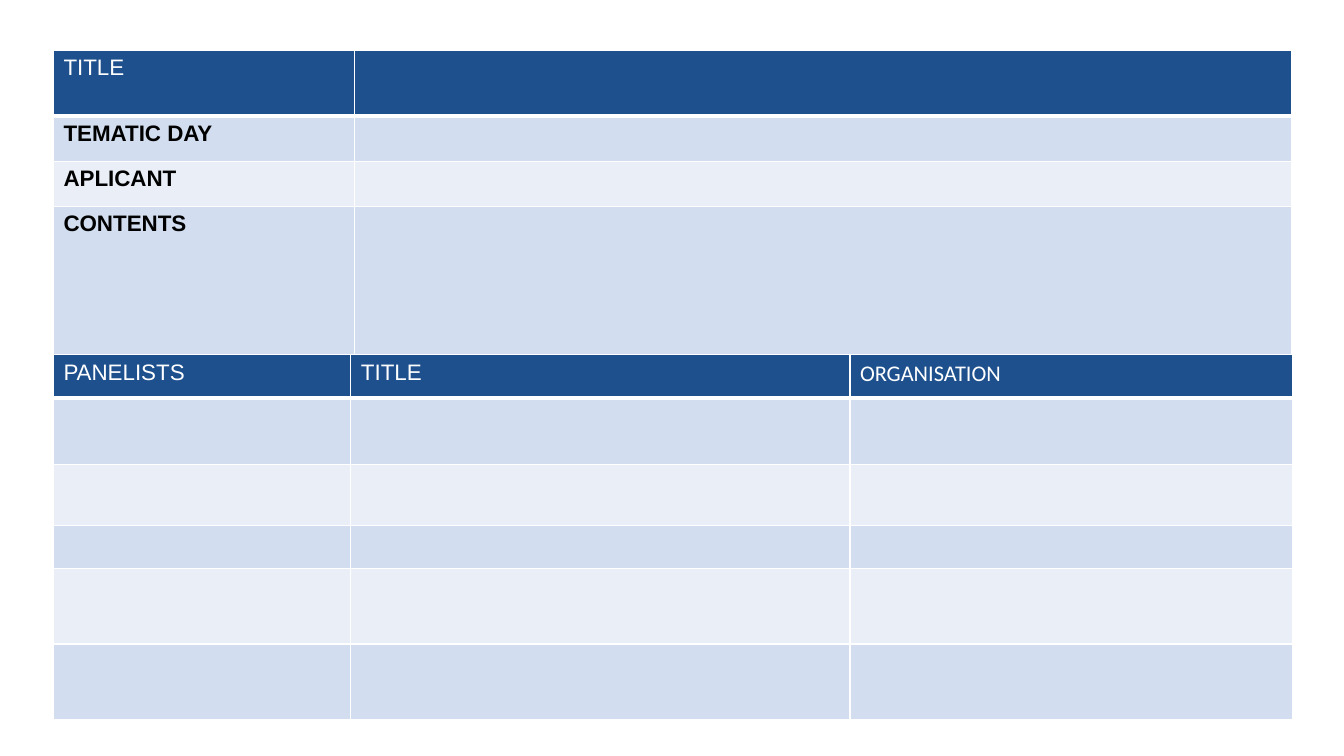
import pptx
import pptx.util
import pptx.dml.color
import pptx.oxml
import pptx.oxml.ns

RGBColor = pptx.dml.color.RGBColor
Inches = pptx.util.Inches

WHITE = RGBColor(0xFF, 0xFF, 0xFF)
BLACK = RGBColor(0x00, 0x00, 0x00)
HEADER = RGBColor(0x1E, 0x50, 0x8D)
BAND_DARK = RGBColor(0xD2, 0xDE, 0xEF)
BAND_LIGHT = RGBColor(0xEA, 0xEF, 0xF7)

SLIDE_W, SLIDE_H = 13.33, 7.5
LEFT = 0.53
FORM_TOP, PANEL_TOP = 0.5, 3.52

FORM_COLS = [2.99, 9.29]
FORM_ROWS = [0.65, 0.45, 0.45, 1.47]
FORM_TEXT = [["TITLE"], ["TEMATIC DAY"], ["APLICANT"], ["CONTENTS"]]

PANEL_COLS = [2.95, 4.95, 4.39]
PANEL_ROWS = [0.43, 0.66, 0.6, 0.43, 0.75, 0.75]
PANEL_TEXT = [["PANELISTS", "TITLE", "ORGANISATION"]]


def set_borders(cell, row):
    """Draw white cell edges, thicker under the header row."""
    tcPr = cell._tc.get_or_add_tcPr()
    thick = {0: "lnB", 1: "lnT"}.get(row)
    for edge in ("lnL", "lnR", "lnT", "lnB"):
        width = pptx.util.Pt(3 if edge == thick else 1)
        tcPr.append(pptx.oxml.parse_xml(
            f'<a:{edge} {pptx.oxml.ns.nsdecls("a")} w="{width}">'
            f'<a:solidFill><a:srgbClr val="{WHITE}"/></a:solidFill></a:{edge}>'))


def set_fill(cell, row):
    cell.fill.solid()
    if row == 0:
        cell.fill.fore_color.rgb = HEADER
    else:
        cell.fill.fore_color.rgb = BAND_DARK if row % 2 else BAND_LIGHT


def add_label(cell, text, row, font_name):
    r = cell.text_frame.paragraphs[0].add_run()
    r.text = text
    r.font.name = font_name
    r.font.size = pptx.util.Pt(16)
    r.font.bold = row > 0
    r.font.color.rgb = BLACK if row else WHITE


def add_banded_table(s, top, cols, rows, labels, fonts):
    """Add a table; labels fill its top-left cells, fonts are per column."""
    table = s.shapes.add_table(
        len(rows), len(cols), Inches(LEFT), Inches(top),
        Inches(sum(cols)), Inches(sum(rows))).table
    for column, width in zip(table.columns, cols):
        column.width = Inches(width)
    for i, height in enumerate(rows):
        table.rows[i].height = Inches(height)
        for cell in table.rows[i].cells:
            set_borders(cell, i)
            set_fill(cell, i)
    for i, texts in enumerate(labels):
        for j, text in enumerate(texts):
            add_label(table.cell(i, j), text, i, fonts[j])


def main():
    prs = pptx.Presentation()
    prs.slide_width, prs.slide_height = Inches(SLIDE_W), Inches(SLIDE_H)
    s = prs.slides.add_slide(prs.slide_layouts[6])
    add_banded_table(s, FORM_TOP, FORM_COLS, FORM_ROWS, FORM_TEXT, ["Arial"])
    add_banded_table(s, PANEL_TOP, PANEL_COLS, PANEL_ROWS, PANEL_TEXT,
                     ["Arial", "Arial", "Calibri"])
    prs.save("out.pptx")


if __name__ == "__main__":
    main()
